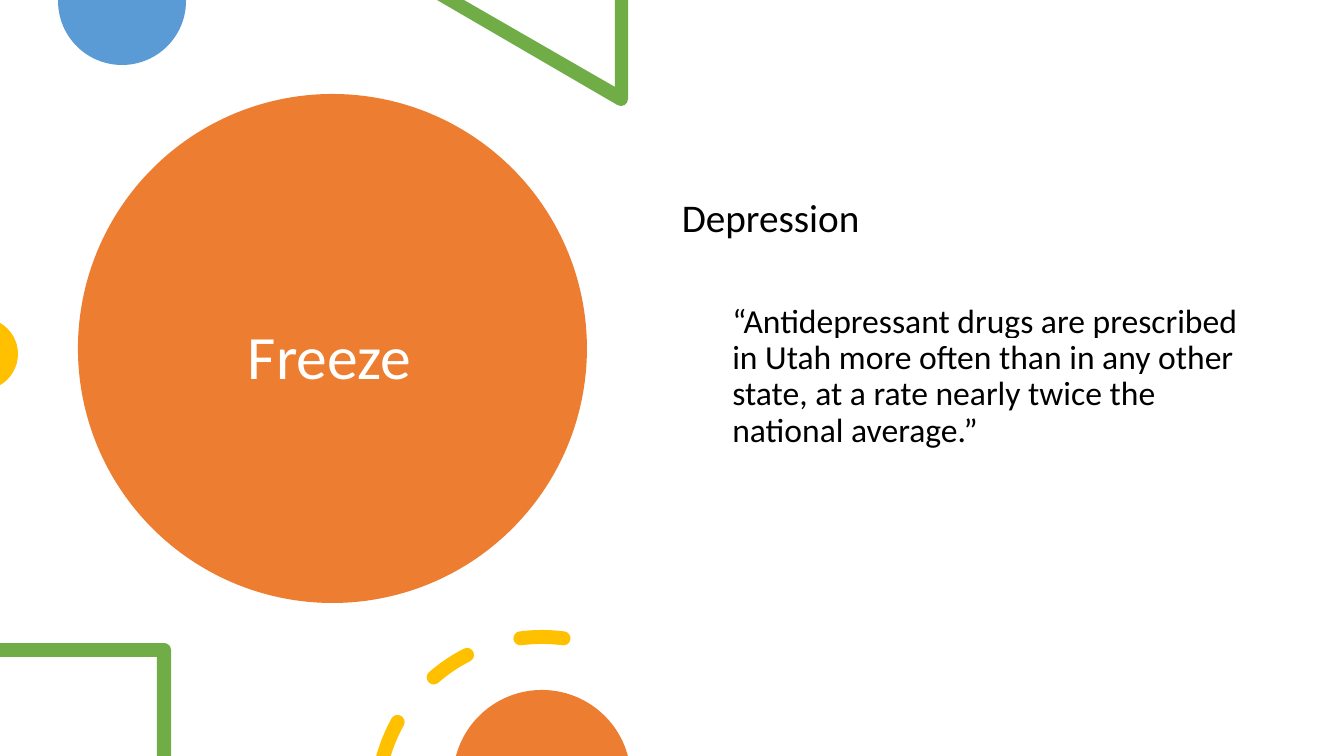
from math import asin, ceil, cos, degrees, radians, sin, tan

from lxml import etree
from pptx import Presentation
from pptx import util as u
from pptx.dml.color import RGBColor
from pptx.enum import shapes, text
from pptx.oxml.ns import qn

PX = 914400 / 100.8
WIDTH, HEIGHT = 1344, 756
FONT = "Calibri"
ORANGE = RGBColor(0xED, 0x7D, 0x31)
BLUE = RGBColor(0x5B, 0x9B, 0xD5)
GREEN = RGBColor(0x70, 0xAD, 0x47)
YELLOW = RGBColor(0xFF, 0xC0, 0x00)
WHITE = RGBColor(0xFF, 0xFF, 0xFF)
BLACK = RGBColor(0, 0, 0)

# left, top, width, height
MAIN_CIRCLE = (78, 94, 509, 509)
TITLE_BOX = (238, 135, 273, 449)
BODY_BOX = (672, 194, 580, 539)

# text, size, colour, level, space before, highlight
TITLE = [("Freeze", 44, WHITE, 0, 0, None)]
BODY = [
    ("Depression", 28, BLACK, 0, 0, None),
    ("“Antidepressant drugs are prescribed in Utah more often than in any "
     "other state, at a rate nearly twice the national average.”",
     24, BLACK, 1, 45, WHITE),
]

# Ring of dashes: centre, radius, half the stroke, (start, end) in degrees
RING_X, RING_Y, RING_R, HALF = 542, 802, 165, 7
DASHES = [(229, 243), (262.5, 277.5)]
CUT_DASH_END = 209


def px(n):
    return u.Emu(round(n * PX))


def arc(cx, cy, r, start, end):
    """Start point, then one Bezier curve (three points) per quarter turn."""
    count = ceil(abs(end - start) / 90)
    step = radians((end - start) / count)
    k = 4 / 3 * tan(step / 4) * r
    steps = [(cos(a), sin(a)) for a in
             (radians(start) + step * i for i in range(count + 1))]
    ends = [(cx + r * c, cy + r * s) for c, s in steps]
    parts = [ends[0]]
    for (c0, s0), (c1, s1), (x0, y0), (x1, y1) in zip(steps, steps[1:], ends, ends[1:]):
        parts.append((x0 - k * s0, y0 + k * c0, x1 + k * s1, y1 - k * c1, x1, y1))
    return parts


def ring_arc(r, start, end):
    return arc(RING_X, RING_Y, r, start, end)


def cap(angle, turn):
    """Curves of a dash's round end, without the start point."""
    a = radians(angle)
    return arc(RING_X + RING_R * cos(a), RING_Y + RING_R * sin(a),
               HALF, turn, turn + 180)[1:]


def dash(start, end):
    return (ring_arc(RING_R + HALF, start, end) + cap(end, end)
            + ring_arc(RING_R - HALF, end, start)[1:] + cap(start, start + 180))


def cut_dash(end):
    """Dash whose start is cut flat by the bottom of the slide."""
    outer, inner = (180 + degrees(asin((RING_Y - HEIGHT) / r))
                    for r in (RING_R + HALF, RING_R - HALF))
    return (ring_arc(RING_R + HALF, outer, end) + cap(end, end)
            + ring_arc(RING_R - HALF, end, inner)[1:])


OUTLINES = [
    (BLUE, [[(58, 0), (186, 0)] + arc(122, 1, 64, 0, 180)]),
    (GREEN, [[(628, 0), (615, 0), (615, 87), (464, 0), (437, 0)]
             + arc(621, 99, 7, 120, 0)]),
    (YELLOW, [arc(-18, 354, 36, -60, 60)]),
    (GREEN, [[(0, 643), (0, 657), (157, 657), (157, 756), (171, 756)]
             + arc(164, 650, 7, 0, -90)]),
    (YELLOW, [cut_dash(CUT_DASH_END)] + [dash(*d) for d in DASHES]),
    (ORANGE, [arc(542, 779, 89, 195, 345)]),
]


def paint(sp, color):
    sp.shadow.inherit = False
    sp.fill.solid()
    sp.fill.fore_color.rgb = color
    sp.line.fill.background()


def add_outline(slide, color, contours):
    """Draw contours of points (lines) and six-number parts (curves)."""
    contours = [[tuple(map(px, part)) for part in c] for c in contours]
    builder = slide.shapes.build_freeform(*contours[0][0])
    for i, (start, *parts) in enumerate(contours):
        if i:
            builder.move_to(*start)
        builder.add_line_segments([part[-2:] for part in parts])
    left, top = builder.shape_offset_x, builder.shape_offset_y
    sp = builder.convert_to_shape()
    segments = list(sp._element.iter(qn("a:lnTo")))
    for segment, part in zip(segments, [p for c in contours for p in c[1:] + [()]
                                        if p or len(segments) != sum(len(k) - 1 for k in contours)]):
        if len(part) == 6:
            segment.tag = qn("a:cubicBezTo")
            for i in (0, 2):
                pt = etree.Element(qn("a:pt"), x=str(part[i] - left),
                                   y=str(part[i + 1] - top))
                segment.insert(i // 2, pt)
    paint(sp, color)


def add_text(slide, box, paragraphs, anchor):
    tf = slide.shapes.add_textbox(*map(px, box)).text_frame
    tf.word_wrap = True
    tf.vertical_anchor = anchor
    for i, (words, size, color, level, before, highlight) in enumerate(paragraphs):
        p = tf.add_paragraph() if i else tf.paragraphs[0]
        p.text = words
        p.level = level
        p.line_spacing = 0.9
        p.space_before = u.Pt(before)
        p.font.name = FONT
        p.font.size = u.Pt(size)
        p.font.color.rgb = color
        pPr = p._p.get_or_add_pPr()
        pPr.set("marL", str(u.Inches(0.5 * level)))
        pPr.set("indent", "0")
        if highlight is not None:
            rPr = p.runs[0]._r.get_or_add_rPr()
            mark = etree.SubElement(rPr, qn("a:highlight"))
            etree.SubElement(mark, qn("a:srgbClr"), val=str(highlight))


def main():
    prs = Presentation()
    prs.slide_width, prs.slide_height = px(WIDTH), px(HEIGHT)
    slide = prs.slides.add_slide(prs.slide_layouts[6])
    circle = slide.shapes.add_shape(shapes.MSO_SHAPE.OVAL, *map(px, MAIN_CIRCLE))
    paint(circle, ORANGE)
    for color, contours in OUTLINES:
        add_outline(slide, color, contours)
    add_text(slide, TITLE_BOX, TITLE, text.MSO_ANCHOR.MIDDLE)
    add_text(slide, BODY_BOX, BODY, text.MSO_ANCHOR.TOP)
    prs.save("out.pptx")


if __name__ == "__main__":
    main()
